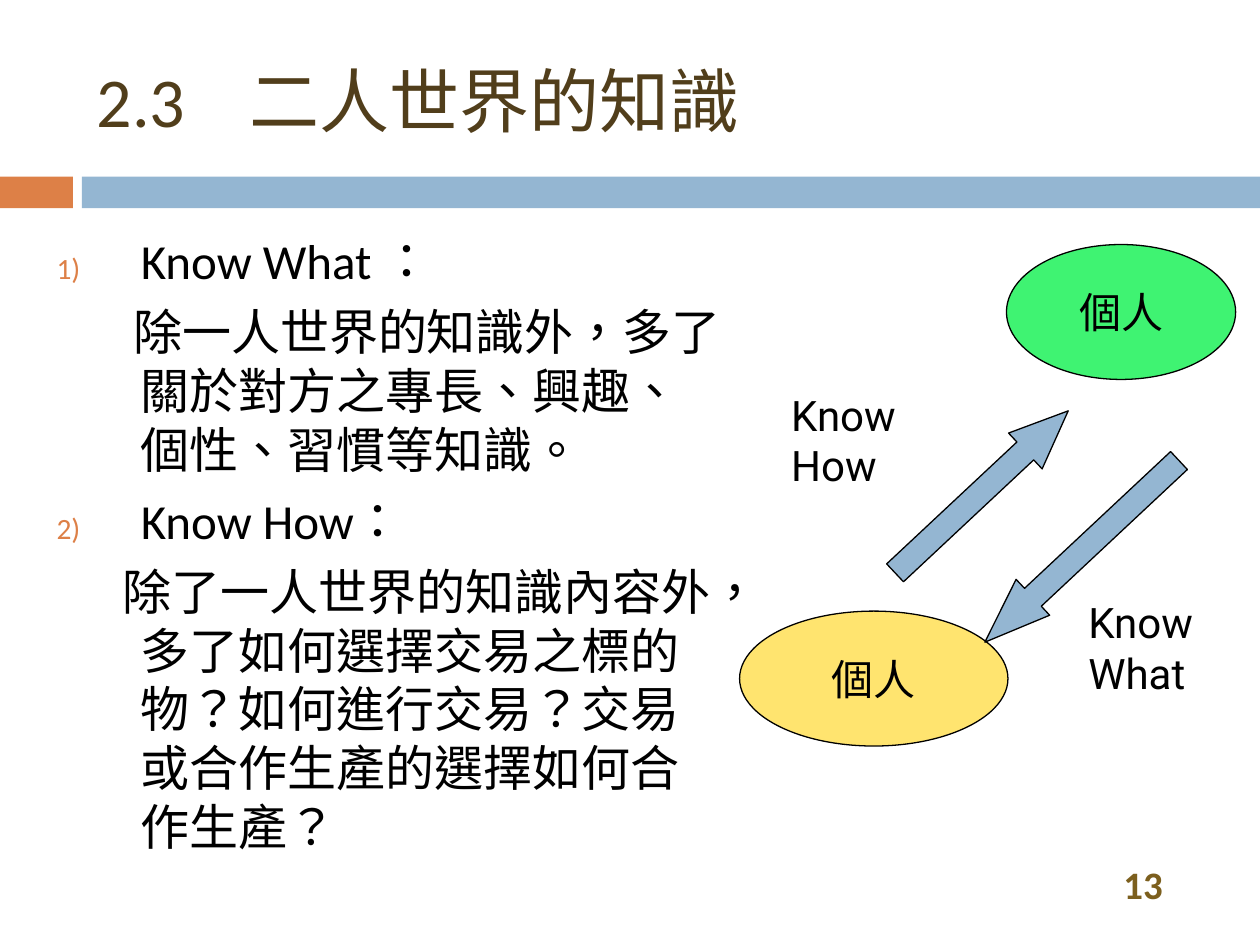
import dataclasses

import pptx
import pptx.dml.color
import pptx.enum.shapes
import pptx.enum.text
import pptx.oxml
import pptx.oxml.ns
import pptx.util

Cm = pptx.util.Cm
Pt = pptx.util.Pt
Shape = pptx.enum.shapes.MSO_SHAPE
Align = pptx.enum.text.PP_ALIGN
Anchor = pptx.enum.text.MSO_ANCHOR


@dataclasses.dataclass(frozen=True)
class Theme:
    orange: str = "DD8047"
    blue: str = "94B6D2"
    yellow: str = "FFE46F"
    green: str = "3FF372"
    black: str = "000000"
    title: str = "513E1B"
    number: str = "7C5F1E"
    title_size: float = 40
    body_size: float = 28
    label_size: float = 24
    number_size: float = 22.2


theme = Theme()


def write(frame, text, size=theme.label_size, font="Calibri", color=theme.black,
          bold=False, align=Align.LEFT, anchor=Anchor.TOP, wrap=True, before=0):
    """Fill a text frame, one paragraph per line of text."""
    frame.word_wrap = wrap
    frame.vertical_anchor = anchor
    for index, line in enumerate(text.split("\n")):
        para = frame.add_paragraph() if index else frame.paragraphs[0]
        para.alignment = align
        para.space_before = Pt(before)
        span = para.add_run()
        span.text = line
        span.font.size = Pt(size)
        span.font.name = font
        span.font.bold = bold
        span.font.color.rgb = pptx.dml.color.RGBColor.from_string(color)
        span.font._element.set("lang", "zh-TW")
    return frame


def add_figure(page, kind, left, top, width, height, fill, outlined=True):
    """Add a flat preset shape, with a thin black outline if wanted."""
    figure = page.shapes.add_shape(kind, Cm(left), Cm(top), Cm(width), Cm(height))
    figure.shadow.inherit = False
    figure.fill.solid()
    figure.fill.fore_color.rgb = pptx.dml.color.RGBColor.from_string(fill)
    if outlined:
        figure.line.width = Pt(0.75)
        figure.line.color.rgb = pptx.dml.color.RGBColor.from_string(theme.black)
    else:
        figure.line.fill.background()
    return figure


deck = pptx.Presentation()
deck.slide_width, deck.slide_height = Cm(25.4), Cm(19.05)
page = deck.slides.add_slide(deck.slide_layouts[6])
namespace = pptx.oxml.ns.nsdecls("a")

# Band under the title
for left, width, fill in ((0, 1.47, theme.orange), (1.65, 23.75, theme.blue)):
    add_figure(page, Shape.RECTANGLE, left, 3.56, width, 0.64, fill, outlined=False)

# The two persons
for left, top, width, fill in ((14.91, 12.32, 5.41, theme.yellow),
                               (20.29, 4.93, 4.62, theme.green)):
    person = add_figure(page, Shape.OVAL, left, top, width, 2.72, fill)
    write(person.text_frame, "個人", font="Arial", align=Align.CENTER,
          anchor=Anchor.MIDDLE, wrap=False)

# Arrows between them, in opposite directions
for left, top, width, angle, head in ((17.4, 9.42, 4.78, 316.9, 1.195),
                                      (19.13, 10.62, 5.36, 136.9, 1.339)):
    arrow = add_figure(page, Shape.RIGHT_ARROW, left, top, width, 0.99, theme.blue)
    arrow.rotation = angle
    arrow.adjustments[1] = head

# Title, with a tab between the number and the words
box = page.shapes.add_textbox(Cm(1.7), Cm(0.74), Cm(22.45), Cm(2.54))
frame = write(box.text_frame, "2.3\t二人世界的知識", size=theme.title_size,
              color=theme.title, anchor=Anchor.MIDDLE)
frame.paragraphs[0]._p.get_or_add_pPr().append(pptx.oxml.parse_xml(
    f'<a:tabLst {namespace}><a:tab pos="{Cm(3.08)}" algn="l"/></a:tabLst>'))

# Slide number
box = page.shapes.add_textbox(Cm(21.89), Cm(17.32), Cm(1.8), Cm(0.99))
write(box.text_frame, "13", size=theme.number_size, color=theme.number, bold=True,
      align=Align.RIGHT, anchor=Anchor.MIDDLE)

# Body: numbered headings, each followed by an explanation
body = (
    ("Know What ：", -1.7, 1),
    ("除一人世界的知識外，多了關於對方之專長、興趣、個性、習慣等知識。", -0.15, None),
    ("Know How：", -1.7, 2),
    ("除了一人世界的知識內容外，多了如何選擇交易之標的物？如何進行交易？"
     "交易或合作生產的選擇如何合作生產？", -0.36, None),
)
box = page.shapes.add_textbox(Cm(0.89), Cm(4.52), Cm(14), Cm(12.6))
frame = write(box.text_frame, "\n".join(text for text, _, _ in body),
              size=theme.body_size, before=7)
for para, (_, indent, number) in zip(frame.paragraphs, body):
    properties = para._p.get_or_add_pPr()
    properties.set("marL", str(Cm(1.7)))
    properties.set("indent", str(Cm(indent)))
    if number:
        for bullet in (
            f'<a:buClr {namespace}><a:srgbClr val="{theme.orange}"/></a:buClr>',
            f'<a:buSzPct {namespace} val="60000"/>',
            f'<a:buAutoNum {namespace} type="arabicParenR" startAt="{number}"/>',
        ):
            properties.append(pptx.oxml.parse_xml(bullet))

# Arrow labels
for text, left, top in (("Know\nWhat", 21.69, 11.91), ("Know\nHow", 15.7, 7.72)):
    box = page.shapes.add_textbox(Cm(left), Cm(top), Cm(2.87), Cm(2.31))
    write(box.text_frame, text, font="Roboto")

deck.save("out.pptx")
